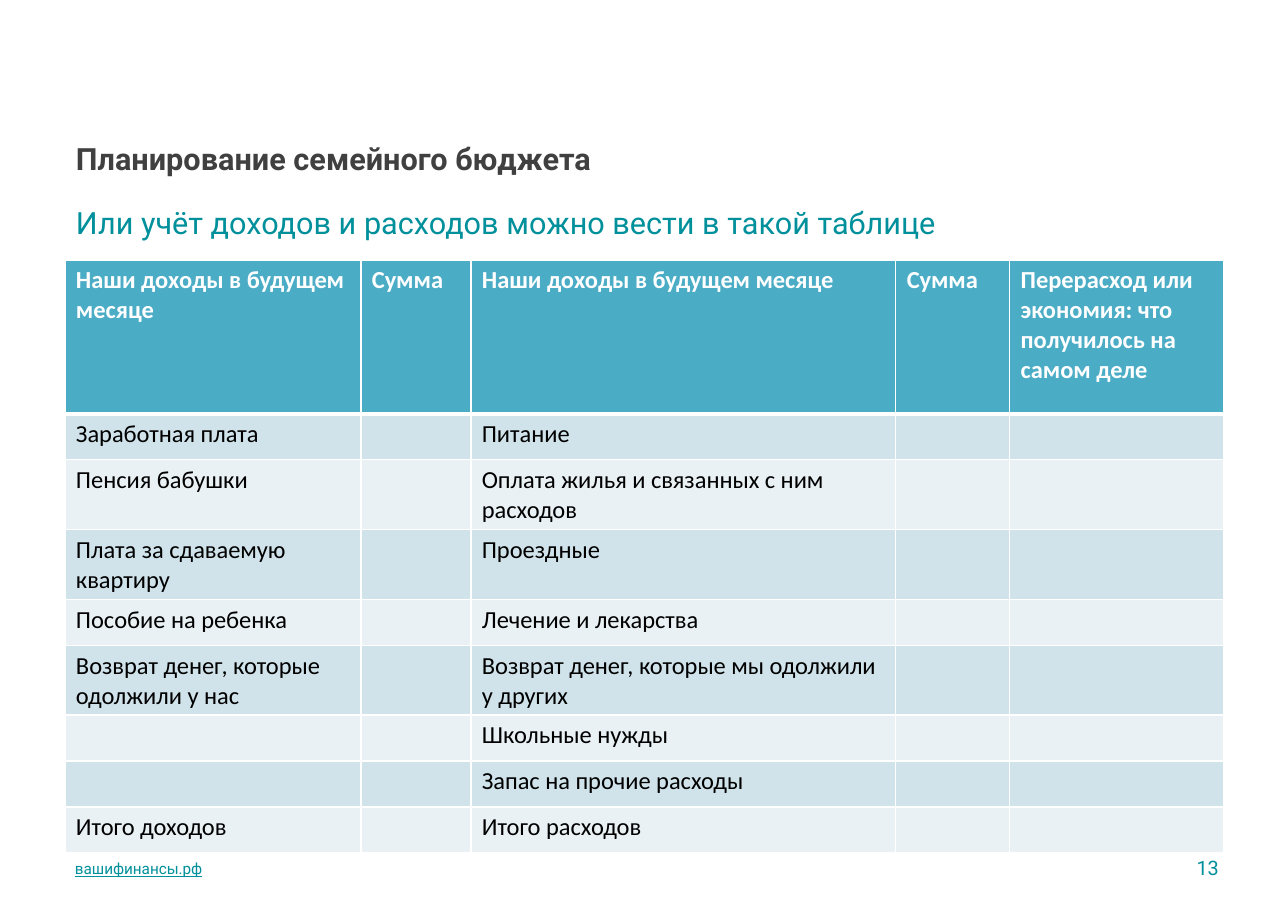
"""Build the family budget planning slide."""
from dataclasses import dataclass

from lxml import etree
from pptx import Presentation
from pptx import util as u
from pptx.dml.color import RGBColor
from pptx.enum import text
from pptx.oxml.ns import qn

EMU_PER_PX = 914400 / 110.2


@dataclass(frozen=True)
class Theme:
    """Colours, fonts and type sizes of the slide."""
    accent: str = "00909B"
    title: str = "404040"
    ink: str = "000000"
    white: str = "FFFFFF"
    header: str = "4BACC6"
    bands: tuple = ("D0E3EA", "E9F1F5")
    font: str = "Roboto"
    table_font: str = "Calibri"
    heading_size: int = 20
    cell_size: int = 16
    number_size: int = 13
    footer_size: int = 10


def px(length):
    """Turn pixels into EMU."""
    return u.Emu(round(length * EMU_PER_PX))


def write(frame, words, *, font, size, color, bold=False, underline=False,
          align=text.PP_ALIGN.LEFT):
    """Put one formatted paragraph into a text frame."""
    paragraph = frame.paragraphs[0]
    paragraph.alignment = align
    run = paragraph.add_run()
    run.text = words
    run.font.name = font
    run.font.size = u.Pt(size)
    run.font.bold = bold
    run.font.underline = underline
    run.font.color.rgb = RGBColor.from_string(color)


class BudgetSlide:
    """Hold the theme and the slide, and draw each kind of element."""

    def __init__(self, slide, theme):
        """Keep the slide and its theme."""
        self.slide = slide
        self.theme = theme

    def label(self, words, left, top, width, height, *,
              anchor=text.MSO_ANCHOR.TOP, **style):
        """Add a wrapped text box."""
        frame = self.slide.shapes.add_textbox(
            px(left), px(top), px(width), px(height)).text_frame
        frame.word_wrap = True
        frame.vertical_anchor = anchor
        frame.margin_left = frame.margin_right = px(12)
        frame.margin_top = frame.margin_bottom = px(6)
        write(frame, words, font=self.theme.font, **style)

    def border(self, cell, side, points):
        """Draw one white side of a cell."""
        line = etree.SubElement(cell._tc.get_or_add_tcPr(), qn(f"a:ln{side}"),
                                w=str(u.Pt(points)))
        fill = etree.SubElement(line, qn("a:solidFill"))
        etree.SubElement(fill, qn("a:srgbClr"), val=self.theme.white)

    def cell(self, cell, words, row):
        """Style and fill one table cell."""
        header = row == 0
        for side, points in (("L", 1), ("R", 1), ("T", 3 if row == 1 else 1),
                             ("B", 3 if header else 1)):
            self.border(cell, side, points)
        fill = self.theme.header if header else self.theme.bands[(row - 1) % 2]
        cell.fill.solid()
        cell.fill.fore_color.rgb = RGBColor.from_string(fill)
        if words:
            write(cell.text_frame, words, font=self.theme.table_font,
                  size=self.theme.cell_size, bold=header,
                  color=self.theme.white if header else self.theme.ink)

    def table(self, rows, left, top, widths, heights):
        """Add a banded table with a header row."""
        table = self.slide.shapes.add_table(
            len(rows), len(widths), px(left), px(top),
            px(sum(widths)), px(sum(heights))).table
        for column, width in zip(table.columns, widths):
            column.width = px(width)
        for row, (words, height) in enumerate(zip(rows, heights)):
            table.rows[row].height = px(height)
            for column, entry in enumerate(words):
                self.cell(table.cell(row, column), entry, row)


HEADER = ("Наши доходы в будущем месяце", "Сумма",
          "Наши доходы в будущем месяце", "Сумма",
          "Перерасход или экономия: что получилось на самом деле")
BUDGET = (
    ("Заработная плата", "Питание"),
    ("Пенсия бабушки", "Оплата жилья и связанных с ним расходов"),
    ("Плата за сдаваемую квартиру", "Проездные"),
    ("Пособие на ребенка", "Лечение и лекарства"),
    ("Возврат денег, которые одолжили у нас",
     "Возврат денег, которые мы одолжили у других"),
    ("", "Школьные нужды"),
    ("", "Запас на прочие расходы"),
    ("Итого доходов", "Итого расходов"),
)


def main():
    """Build and save the presentation."""
    presentation = Presentation()
    presentation.slide_width = u.Inches(11.69)
    presentation.slide_height = u.Inches(8.27)
    theme = Theme()
    page = BudgetSlide(
        presentation.slides.add_slide(presentation.slide_layouts[6]), theme)

    page.label("вашифинансы.рф", 63, 845, 437, 48, size=theme.footer_size,
               color=theme.accent, underline=True,
               anchor=text.MSO_ANCHOR.MIDDLE)
    page.label("Планирование семейного бюджета", 64, 134, 1159, 64,
               size=theme.heading_size, color=theme.title, bold=True)
    rows = [HEADER] + [(income, "", expense, "", "")
                       for income, expense in BUDGET]
    page.table(rows, 65, 260, (296, 110, 425, 114, 214),
               [154] + [46] * len(BUDGET))
    page.label("Или учёт доходов и расходов можно вести в такой таблице",
               64, 198, 1159, 62, size=theme.heading_size, color=theme.accent)
    page.label("13", 1135, 844, 96, 48, size=theme.number_size,
               color=theme.accent, align=text.PP_ALIGN.RIGHT,
               anchor=text.MSO_ANCHOR.MIDDLE)
    presentation.save("out.pptx")


if __name__ == "__main__":
    main()
